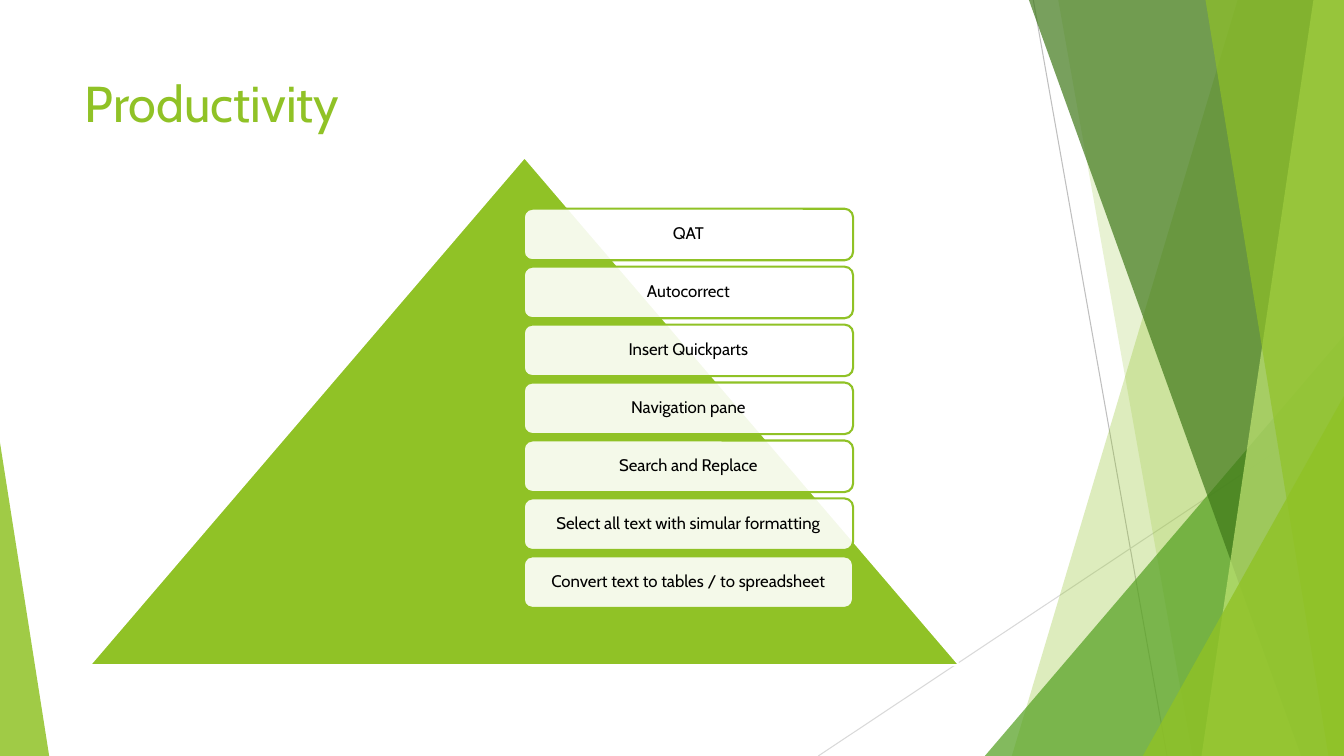
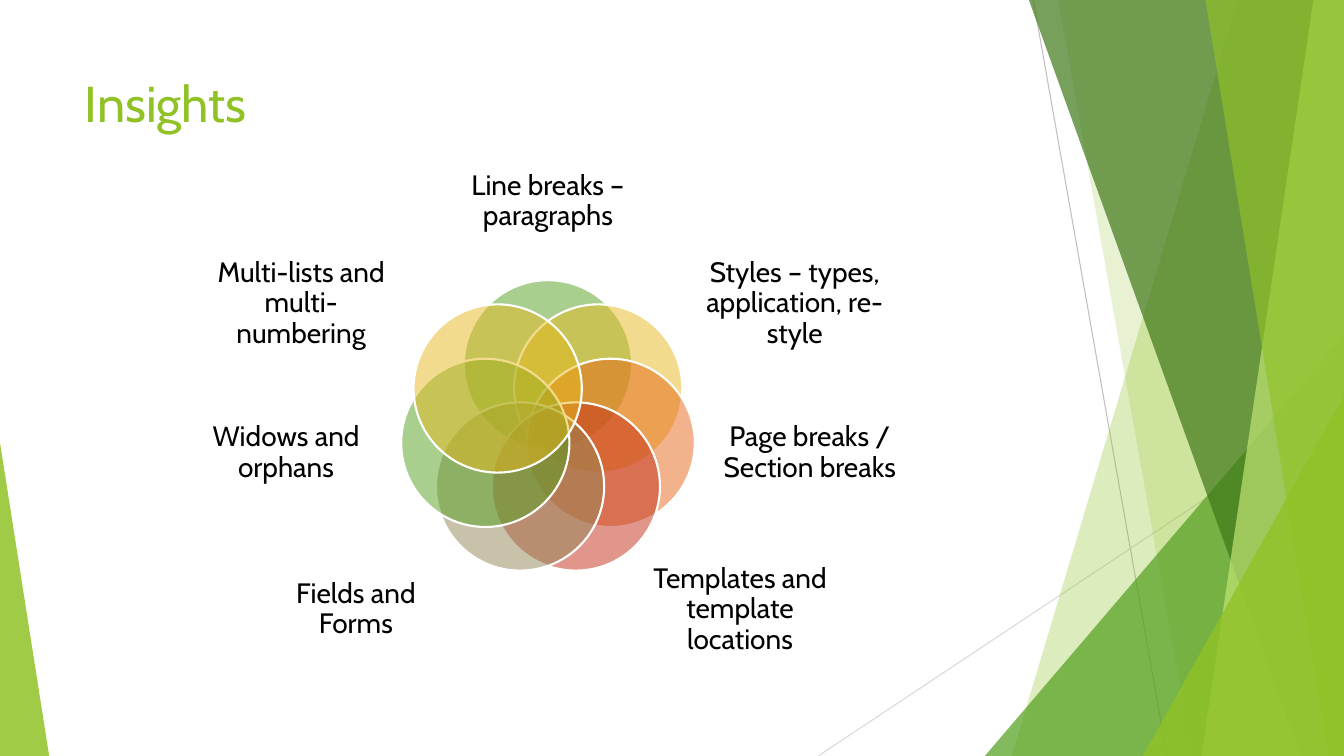
import math
from dataclasses import dataclass
from typing import Optional, Union

import lxml.etree
import pptx
import pptx.dml.color
import pptx.enum.shapes
import pptx.enum.text
import pptx.oxml.ns
import pptx.util

Cm = pptx.util.Cm
Pt = pptx.util.Pt
Kind = pptx.enum.shapes.MSO_SHAPE
Align = pptx.enum.text.PP_ALIGN
Anchor = pptx.enum.text.MSO_ANCHOR

WIDE, HIGH = 33.87, 19.05
FONT = "Cabin"
HUES = {
    "lime": "90C226", "leaf": "54A021", "moss": "3F7819", "pale": "C0E474",
    "gold": "E6B91E", "orange": "E76618", "red": "C42F1A", "olive": "918655",
    "grey": "BFBFBF", "mist": "D9D9D9", "white": "FFFFFF", "black": "000000",
}


@dataclass
class Ray:
    x1: float
    y1: float
    x2: float
    y2: float
    hue: str


@dataclass
class Band:
    """A full-height area from a slanted left edge to the right border."""
    top: float
    base: float
    hue: str
    alpha: int


@dataclass
class Wedge:
    """A right triangle standing on the bottom border."""
    left: float
    top: float
    width: float
    peak: int
    hue: str
    alpha: int


@dataclass
class Spot:
    """A label box, placed by its centre's distance from the ring's axis."""
    shift: float
    top: float
    width: float
    height: float


@dataclass
class Petal:
    text: str
    hue: str


DECOR = [
    Ray(26.04, 0, 29.41, HIGH, "grey"),
    Ray(WIDE, 10.24, 20.62, HIGH, "mist"),
    Band(31.19, 25.5, "lime", 30),
    Band(26.67, 30.05, "lime", 20),
    Wedge(24.82, 8.46, WIDE - 24.82, 1, "leaf", 72),
    Band(25.93, 32.79, "moss", 70),
    Band(33.1, 30.28, "pale", 70),
    Band(30.38, 33.48, "lime", 65),
    Wedge(28.8, 9.98, WIDE - 28.8, 1, "lime", 80),
    Wedge(0, 11.15, 1.24, 0, "lime", 85),
]

TOPICS = [
    "QAT", "Autocorrect", "Insert Quickparts", "Navigation pane",
    "Search and Replace", "Select all text with simular formatting",
    "Convert text to tables / to spreadsheet",
]

PETALS = [
    Petal("Line breaks – paragraphs", "leaf"),
    Petal("Styles – types, application, re-style", "gold"),
    Petal("Page breaks / Section breaks", "orange"),
    Petal("Templates and template locations", "red"),
    Petal("Fields and Forms", "olive"),
    Petal("Widows and orphans", "leaf"),
    Petal("Multi-lists and multi-numbering", "gold"),
]

SPOTS = [
    Spot(0, 3.76, 4.88, 2.62),
    Spot(6.22, 6.22, 4.6, 2.87),
    Spot(6.6, 9.88, 4.52, 3.07),
    Spot(4.84, 13.97, 4.88, 2.79),
]


def tint(hue: str) -> pptx.dml.color.RGBColor:
    return pptx.dml.color.RGBColor.from_string(HUES[hue])


def paint(shape, hue: str, alpha: int = 100, edge: Optional[str] = None) -> None:
    """Fill a shape, with alpha as percent of opacity, and set its outline."""
    shape.shadow.inherit = False
    shape.fill.solid()
    shape.fill.fore_color.rgb = tint(hue)
    if alpha < 100:
        qn = pptx.oxml.ns.qn
        color = shape.element.spPr.find(f"{qn('a:solidFill')}/{qn('a:srgbClr')}")
        lxml.etree.SubElement(color, qn("a:alpha")).set("val", str(alpha * 1000))
    if edge:
        shape.line.color.rgb = tint(edge)
        shape.line.width = Pt(1.5)
    else:
        shape.line.fill.background()


def place(shapes, kind, left: float, top: float, width: float, height: float):
    return shapes.add_shape(kind, Cm(left), Cm(top), Cm(width), Cm(height))


def write(shape, text: str, size: int, hue: str, align, anchor) -> None:
    frame = shape.text_frame
    frame.text = text
    frame.word_wrap = True
    frame.vertical_anchor = anchor
    for para in frame.paragraphs:
        para.alignment = align
        for run in para.runs:
            run.font.name = FONT
            run.font.size = Pt(size)
            run.font.color.rgb = tint(hue)


def label(shape, text: str, size: int, inset: float) -> None:
    """Write centred black text with tight lines and equal margins."""
    write(shape, text, size, "black", Align.CENTER, Anchor.MIDDLE)
    frame = shape.text_frame
    frame.margin_left = frame.margin_right = Cm(inset)
    frame.margin_top = frame.margin_bottom = Cm(inset)
    frame.paragraphs[0].line_spacing = 0.9


def draw(shapes, item: Union[Ray, Band, Wedge]):
    if isinstance(item, Ray):
        line = shapes.add_connector(
            pptx.enum.shapes.MSO_CONNECTOR.STRAIGHT,
            Cm(item.x1), Cm(item.y1), Cm(item.x2), Cm(item.y2))
        line.line.color.rgb = tint(item.hue)
        line.line.width = Pt(0.75)
        lxml.etree.SubElement(line.element.spPr, pptx.oxml.ns.qn("a:effectLst"))
        return line
    if isinstance(item, Band):
        pen = shapes.build_freeform(Cm(item.top), 0)
        pen.add_line_segments([(Cm(WIDE), 0), (Cm(WIDE), Cm(HIGH)),
                               (Cm(item.base), Cm(HIGH))])
        shape = pen.convert_to_shape()
    else:
        shape = place(shapes, Kind.ISOSCELES_TRIANGLE,
                      item.left, item.top, item.width, HIGH - item.top)
        shape.adjustments[0] = item.peak
    paint(shape, item.hue, item.alpha)
    return shape


def dress(layout, slide) -> None:
    """Give the layout its title box and the decor, drawn by way of a slide."""
    for holder in list(layout.placeholders):
        if holder.placeholder_format.type != pptx.enum.shapes.PP_PLACEHOLDER.TITLE:
            holder.element.getparent().remove(holder.element)
    title = layout.placeholders[0]
    title.left, title.top = Cm(1.88), Cm(1.7)
    title.width, title.height = Cm(23.88), Cm(3.66)
    for index, item in enumerate(DECOR, start=2):
        layout.shapes.element.insert(index, draw(slide.shapes, item).element)


def head(slide, text: str) -> None:
    write(slide.shapes.title, text, 36, "lime", Align.LEFT, Anchor.TOP)


def stack(slide) -> None:
    """Draw the pyramid with its column of topics."""
    peak = place(slide.shapes, Kind.ISOSCELES_TRIANGLE, 2.26, 3.96, 21.92, 12.8)
    paint(peak, "lime", edge="white")
    for row, topic in enumerate(TOPICS):
        box = place(slide.shapes, Kind.ROUNDED_RECTANGLE,
                    13.2, 5.26 + 1.46 * row, 8.3, 1.3)
        paint(box, "white", 90, "lime")
        label(box, topic, 12, 0.13)


def bloom(slide) -> None:
    """Draw the ring of circles with labels mirrored about its axis."""
    mid_x, mid_y, reach, size = 13.81, 10.8, 1.62, 4.24
    count = len(PETALS)
    for index, petal in enumerate(PETALS):
        angle = math.tau * index / count
        disc = place(slide.shapes, Kind.OVAL,
                     mid_x + reach * math.sin(angle) - size / 2,
                     mid_y - reach * math.cos(angle) - size / 2, size, size)
        paint(disc, petal.hue, 50, "white")
        spot = SPOTS[min(index, count - index)]
        side = 1 if index <= count // 2 else -1
        box = slide.shapes.add_textbox(
            Cm(mid_x + side * spot.shift - spot.width / 2), Cm(spot.top),
            Cm(spot.width), Cm(spot.height))
        label(box, petal.text, 20, 0)


def main() -> None:
    deck = pptx.Presentation()
    deck.slide_width, deck.slide_height = Cm(WIDE), Cm(HIGH)
    layout = deck.slide_layouts[5]
    first = deck.slides.add_slide(layout)
    dress(layout, first)
    head(first, "Productivity")
    stack(first)
    second = deck.slides.add_slide(layout)
    head(second, "Insights")
    bloom(second)
    deck.save("out.pptx")


if __name__ == "__main__":
    main()
